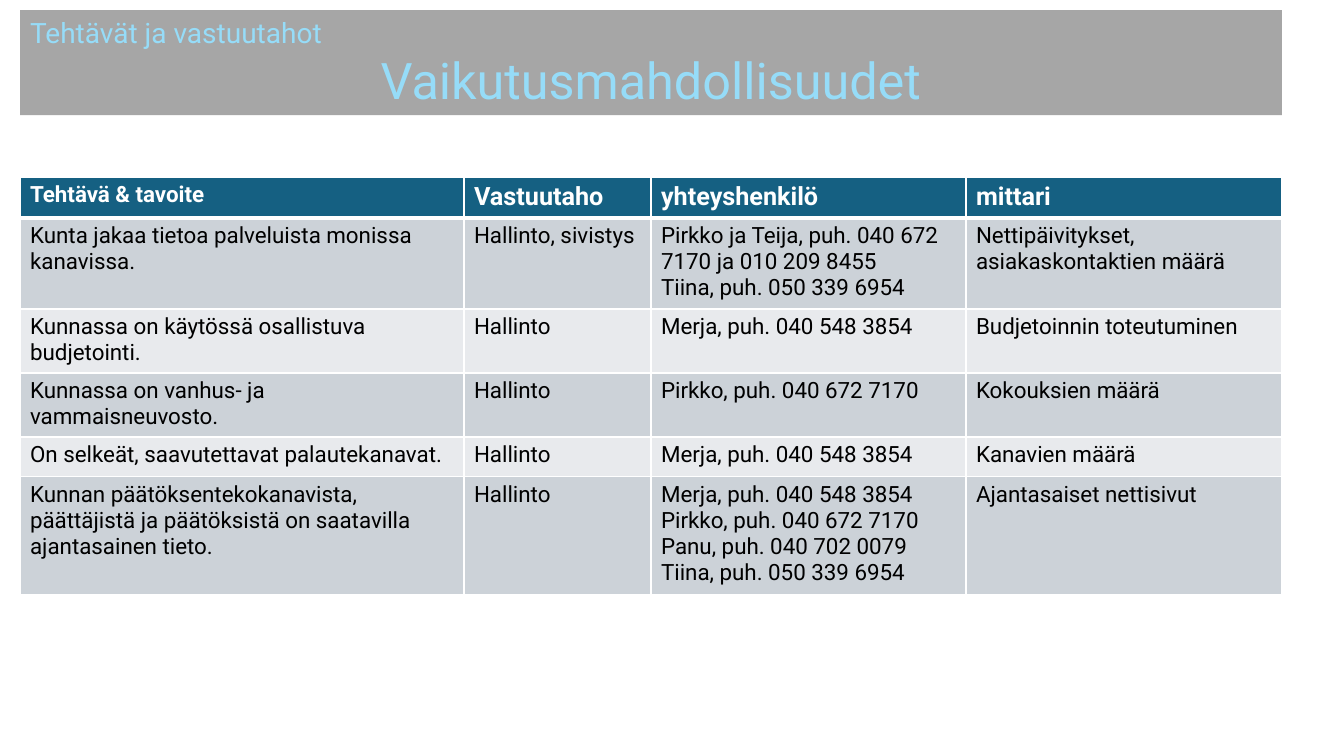
"""Build the slide on tasks and responsible parties for participation."""
import pptx
import pptx.chart
import pptx.dml.color
import pptx.enum.text
import pptx.oxml
import pptx.oxml.ns
import pptx.util

PX = 914400 / 100.8
FONT = "Roboto"
COLORS = {
    "banner": "A6A6A6",
    "title": "96DCF8",
    "header": "156082",
    "odd": "CCD2D8",
    "even": "E8EAED",
    "white": "FFFFFF",
    "black": "000000",
}
COLUMN_WIDTHS = [444, 187, 315, 316]
ROW_HEIGHTS = [41, 91, 64, 64, 40, 117]
MERJA = "Merja, puh. 040 548 3854"
PIRKKO = "Pirkko, puh. 040 672 7170"
TIINA = "Tiina, puh. 050 339 6954"
ROWS = [
    ["Tehtävä & tavoite", "Vastuutaho", "yhteyshenkilö", "mittari"],
    ["Kunta jakaa tietoa palveluista monissa kanavissa.", "Hallinto, sivistys",
     f"Pirkko ja Teija, puh. 040 672 7170 ja 010 209 8455\n{TIINA}",
     "Nettipäivitykset, asiakaskontaktien määrä"],
    ["Kunnassa on käytössä osallistuva budjetointi.", "Hallinto", MERJA,
     "Budjetoinnin toteutuminen"],
    ["Kunnassa on vanhus- ja vammaisneuvosto.", "Hallinto", PIRKKO,
     "Kokouksien määrä"],
    ["On selkeät, saavutettavat palautekanavat.", "Hallinto", MERJA,
     "Kanavien määrä"],
    ["Kunnan päätöksentekokanavista, päättäjistä ja päätöksistä on saatavilla "
     "ajantasainen tieto.", "Hallinto",
     f"{MERJA}\n{PIRKKO}\nPanu, puh. 040 702 0079\n{TIINA}",
     "Ajantasaiset nettisivut"],
]


def px(length):
    """Turn px into EMU."""
    return pptx.util.Emu(round(length * PX))


def add_line(frame, index, text, size, color, bold=False):
    """Write one paragraph of a text frame and return it."""
    para = frame.paragraphs[0] if index == 0 else frame.add_paragraph()
    span = para.add_run()
    span.text = text
    span.font.name = FONT
    span.font.size = pptx.util.Pt(size)
    span.font.bold = bold
    span.font.color.rgb = pptx.dml.color.RGBColor.from_string(COLORS[color])
    return para


deck = pptx.Presentation()
deck.slide_width, deck.slide_height = px(1344), px(756)
page = deck.slides.add_slide(deck.slide_layouts.get_by_name("Title Only"))

banner = page.shapes.title
banner.left, banner.top, banner.width, banner.height = px(20), px(10), px(1262), px(105)
banner.fill.solid()
banner.fill.fore_color.rgb = pptx.dml.color.RGBColor.from_string(COLORS["banner"])
frame = banner.text_frame
frame.word_wrap = True
frame.auto_size = pptx.enum.text.MSO_AUTO_SIZE.SHAPE_TO_FIT_TEXT
frame.vertical_anchor = pptx.enum.text.MSO_ANCHOR.TOP
align = pptx.enum.text.PP_ALIGN
for index, (text, size, alignment) in enumerate([
    ("Tehtävät ja vastuutahot", 20, align.LEFT),
    ("Vaikutusmahdollisuudet", 36, align.CENTER),
]):
    add_line(frame, index, text, size, "title").alignment = alignment

table = page.shapes.add_table(
    len(ROWS), len(COLUMN_WIDTHS), px(20), px(177),
    px(sum(COLUMN_WIDTHS)), px(sum(ROW_HEIGHTS))).table
table.horz_banding = False
for column, width in zip(table.columns, COLUMN_WIDTHS):
    column.width = px(width)

for r, (texts, height) in enumerate(zip(ROWS, ROW_HEIGHTS)):
    table.rows[r].height = px(height)
    fill = "header" if r == 0 else "odd" if r % 2 else "even"
    for c, text in enumerate(texts):
        cell = table.cell(r, c)
        cell.fill.solid()
        cell.fill.fore_color.rgb = pptx.dml.color.RGBColor.from_string(COLORS[fill])
        size = 18 if r == 0 and c > 0 else 16
        for index, line in enumerate(text.split("\n")):
            add_line(cell.text_frame, index, line, size,
                     "black" if r else "white", r == 0)
        properties = cell._tc.get_or_add_tcPr()
        for position, side in enumerate("LRTB"):
            thick = (r, side) in [(0, "B"), (1, "T")]
            properties.insert(position, pptx.oxml.parse_xml(
                f'<a:ln{side} {pptx.oxml.ns.nsdecls("a")} '
                f'w="{pptx.util.Pt(3 if thick else 1)}"><a:solidFill>'
                f'<a:srgbClr val="{COLORS["white"]}"/></a:solidFill></a:ln{side}>'))

deck.save("out.pptx")
